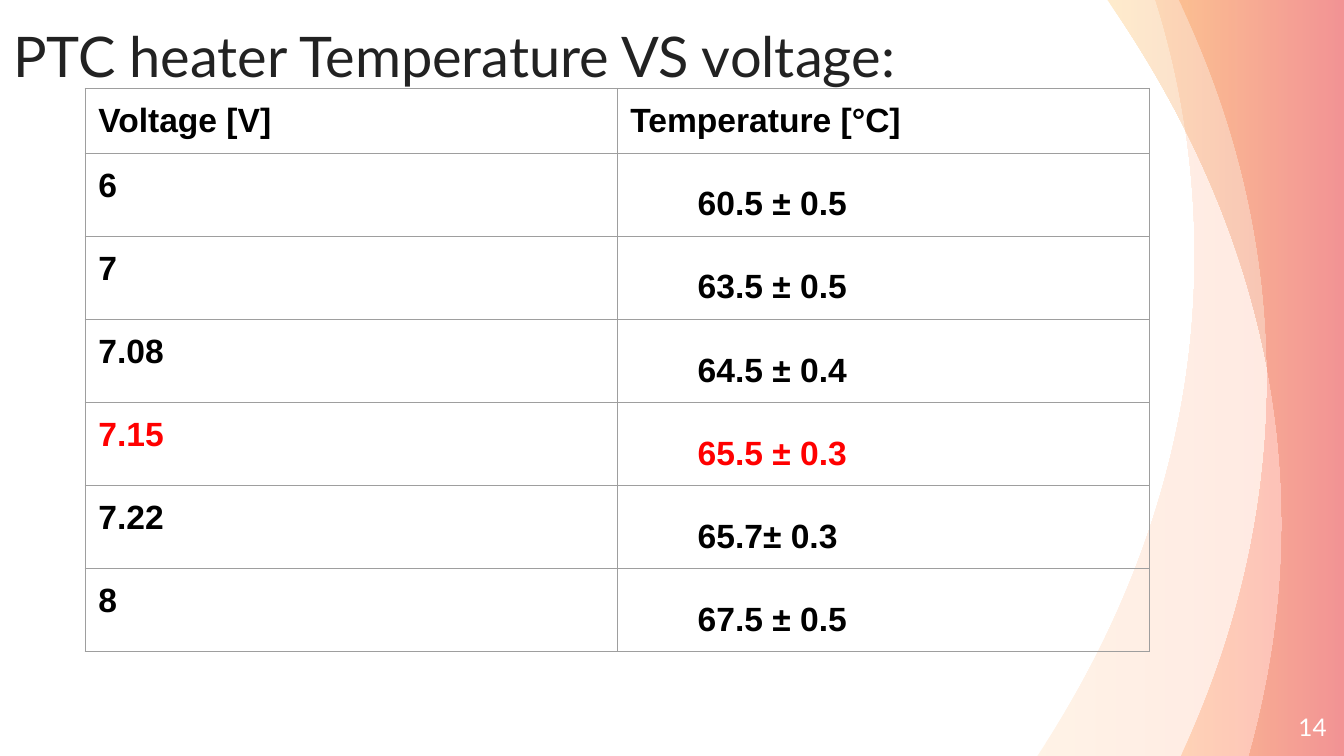
from lxml import etree
from pptx import Presentation
from pptx.dml.color import RGBColor
from pptx.enum.text import MSO_ANCHOR, PP_ALIGN
from pptx.oxml.ns import qn
from pptx.util import Cm, Pt

BOTTOM, MIDDLE = MSO_ANCHOR.BOTTOM, MSO_ANCHOR.MIDDLE
LEFT, RIGHT = PP_ALIGN.LEFT, PP_ALIGN.RIGHT

BLACK = RGBColor(0x00, 0x00, 0x00)
WHITE = RGBColor(0xFF, 0xFF, 0xFF)
CHARCOAL = RGBColor(0x22, 0x22, 0x22)
RED = RGBColor(0xFF, 0x00, 0x00)
SAND = RGBColor(0xFF, 0xC4, 0x86)
CORAL = RGBColor(0xFF, 0x86, 0x6B)
ORANGE = RGBColor(0xFF, 0x6A, 0x00)
CRIMSON = RGBColor(0xF2, 0x01, 0x22)
AMBER = RGBColor(0xFF, 0x9F, 0x00)
DARK_RED = RGBColor(0xCC, 0x00, 0x00)
BORDER = "9E9E9E"

PAGE_WIDTH, PAGE_HEIGHT = 25.4, 14.29
WAVE_HEIGHT = 14.33

WAVES = [
    (SAND, CORAL, [(19.58, WAVE_HEIGHT), (21.51, 11.43), (22.58, 8.2), (22.58, 4.83),
                   (22.58, 3.18), (22.33, 1.55), (21.84, 0)]),
    (ORANGE, CRIMSON, [(22.3, WAVE_HEIGHT), (23.37, 12.07), (23.95, 9.65), (23.95, 7.16),
                       (23.95, 4.67), (23.37, 2.26), (22.28, 0)]),
    (AMBER, DARK_RED, [(23.6, WAVE_HEIGHT), (24, 12.9), (24.23, 11.43), (24.23, 9.91),
                       (24.23, 6.38), (23.04, 3.02), (20.93, 0)]),
]

HEADINGS = ("Voltage [V]", "Temperature [°C]")
READINGS = [
    ("6", "60.5 ± 0.5"),
    ("7", "63.5 ± 0.5"),
    ("7.08", "64.5 ± 0.4"),
    ("7.15", "65.5 ± 0.3"),
    ("7.22", "65.7± 0.3"),
    ("8", "67.5 ± 0.5"),
]
HIGHLIGHTED_VOLTAGE = "7.15"
HEADING_HEIGHT, READING_HEIGHT = 1.23, 1.57


def bend_edge(wave):
    """Turn the first six line segments of a wave into two cubic curves."""
    segments = list(wave.element.spPr.iter(qn("a:lnTo")))
    for start in (0, 3):
        curve = etree.Element(qn("a:cubicBezTo"))
        segments[start].addprevious(curve)
        for segment in segments[start:start + 3]:
            curve.append(segment[0])
            segment.getparent().remove(segment)


def add_wave(page, left_color, right_color, edge):
    """Add a translucent gradient band between a curved edge and the page side."""
    outline = edge + [(PAGE_WIDTH, 0), (PAGE_WIDTH, WAVE_HEIGHT)]
    points = [(Cm(x), Cm(y)) for x, y in outline]
    builder = page.shapes.build_freeform(*points[0])
    builder.add_line_segments(points[1:])
    wave = builder.convert_to_shape()
    bend_edge(wave)
    wave.shadow.inherit = False
    wave.line.fill.background()
    wave.fill.gradient()
    wave.fill.gradient_angle = 0
    for stop, color in zip(wave.fill.gradient_stops, (left_color, right_color)):
        stop.color.rgb = color
    for color in wave.element.spPr.iter(qn("a:srgbClr")):
        etree.SubElement(color, qn("a:alpha"), val="20000")


def add_span(para, text, font_name, size, color, bold=False):
    """Add one formatted run to a paragraph."""
    span = para.add_run()
    span.text = text
    span.font.name = font_name
    span.font.size = Pt(size)
    span.font.bold = bold
    span.font.color.rgb = color


def add_label(page, text, bounds, size, color, anchor, alignment):
    """Add a text box without margins."""
    box = page.shapes.add_textbox(*(Cm(length) for length in bounds))
    frame = box.text_frame
    frame.word_wrap = True
    frame.vertical_anchor = anchor
    frame.margin_left = frame.margin_right = frame.margin_top = frame.margin_bottom = 0
    para = frame.paragraphs[0]
    para.alignment = alignment
    add_span(para, text, "Lato", size, color)


def set_borders(cell):
    """Draw a thin grey line on each side of a cell."""
    properties = cell._tc.get_or_add_tcPr()
    for side in ("lnL", "lnR", "lnT", "lnB"):
        line = etree.SubElement(properties, qn(f"a:{side}"), w=str(Pt(0.75)))
        fill = etree.SubElement(line, qn("a:solidFill"))
        etree.SubElement(fill, qn("a:srgbClr"), val=BORDER)


def fill_cell(cell, text, color, indented):
    """Write one table cell, with an indent for measured temperatures."""
    set_borders(cell)
    cell.fill.background()
    cell.margin_left = cell.margin_right = cell.margin_top = Cm(0.25)
    cell.margin_bottom = Cm(0.1)
    para = cell.text_frame.paragraphs[0]
    if indented:
        para._p.get_or_add_pPr().set("marL", str(Cm(1.27)))
        para.line_spacing = 1.5
    add_span(para, text, "Arial", 18, color, bold=True)


def add_readings(page):
    """Add the table of voltages and temperatures."""
    rows = [HEADINGS] + READINGS
    heights = [HEADING_HEIGHT] + [READING_HEIGHT] * len(READINGS)
    frame = page.shapes.add_table(len(rows), len(HEADINGS), Cm(1.61), Cm(1.67),
                                  Cm(20.11), Cm(sum(heights)))
    table = frame.table
    table.first_row = False
    table.horz_banding = False
    for row_index, (values, height) in enumerate(zip(rows, heights)):
        table.rows[row_index].height = Cm(height)
        color = RED if values[0] == HIGHLIGHTED_VOLTAGE else BLACK
        for column_index, text in enumerate(values):
            indented = row_index > 0 and column_index == 1
            fill_cell(table.cell(row_index, column_index), text, color, indented)


def main():
    """Build and save the slide."""
    deck = Presentation()
    deck.slide_width, deck.slide_height = Cm(PAGE_WIDTH), Cm(PAGE_HEIGHT)
    page = deck.slides.add_slide(deck.slide_layouts[6])
    for left_color, right_color, edge in WAVES:
        add_wave(page, left_color, right_color, edge)
    add_label(page, "PTC heater Temperature VS voltage:", (0.25, 0, 20.55, 1.68),
              30, CHARCOAL, BOTTOM, LEFT)
    add_label(page, "14", (23.55, 13.19, 1.52, 1.09), 13, WHITE, MIDDLE, RIGHT)
    add_readings(page)
    deck.save("out.pptx")


if __name__ == "__main__":
    main()
